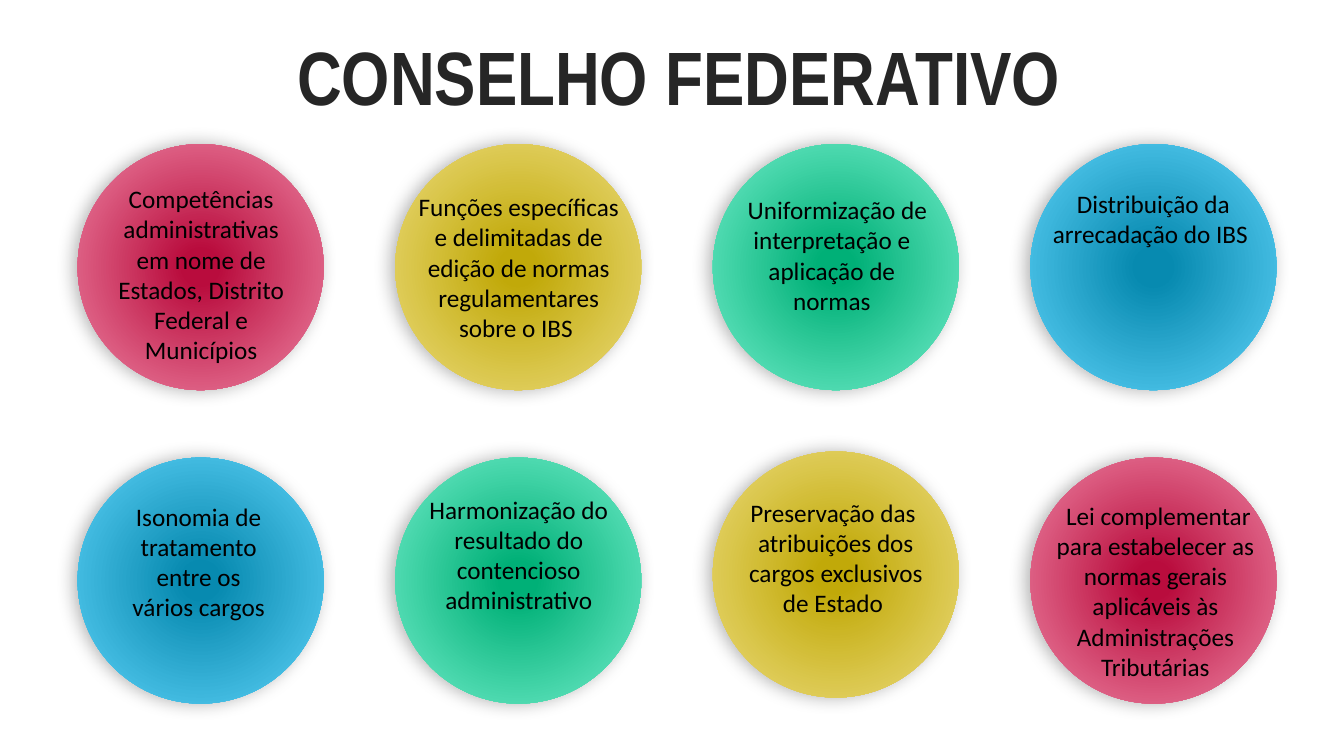
from lxml.etree import fromstring
from pptx import Presentation
from pptx.dml.color import RGBColor
from pptx.enum.shapes import MSO_SHAPE
from pptx.enum.text import MSO_ANCHOR, MSO_AUTO_SIZE, PP_ALIGN
from pptx.oxml.ns import nsdecls
from pptx.util import Inches, Pt

HUES = {"title": "262626", "text": "000000", "shade": "000000"}
GRADS = {
    "red": ("B90C3D", "EE86A4"),
    "gold": ("C1A909", "ECDC7C"),
    "green": ("00B077", "74EECB"),
    "blue": ("078AB0", "5FD2F8"),
}
LEFT, STEP, SIZE = 0.77, 3.15, 2.44

ROWS = [
    [
        ("red", 1.43, (0.95, 1.77, 2.09, 1.62), 0,
         ["Competências administrativas em nome de Estados, Distrito Federal e Municípios"]),
        ("gold", 1.43, (4, 1.85, 2.29, 1.62), 0,
         ["Funções específicas e delimitadas de edição de normas regulamentares sobre o IBS "]),
        ("green", 1.43, (7.16, 1.88, 2.18, 1.55), 0.11,
         ["Uniformização de interpretação e aplicação de normas"]),
        ("blue", 1.43, (10.21, 1.82, 2.4, 0.71), 0.06,
         ["Distribuição da arrecadação do IBS"]),
    ],
    [
        ("blue", 4.54, (1.13, 4.92, 1.68, 1.31), 0,
         ["Isonomia de tratamento entre os vários cargos"]),
        ("green", 4.54, (4, 4.85, 2.29, 1.31), 0,
         ["Harmonização do resultado do contencioso administrativo"]),
        ("gold", 4.48, (7.2, 4.88, 2.18, 1.31), 0,
         ["Preservação das ", "atribuições dos cargos exclusivos de Estado "]),
        ("red", 4.54, (10.33, 4.91, 2.26, 1.92), 0.06,
         ["Lei complementar para estabelecer as normas gerais aplicáveis às "
          "Administrações Tributárias"]),
    ],
]


class Deck:
    def __init__(self):
        self.show = Presentation()
        self.show.slide_width = Inches(13.33)
        self.show.slide_height = Inches(7.5)
        self.slide = self.show.slides.add_slide(self.show.slide_layouts[5])

    def words(self, para, text, font, size, hue, bold=False):
        para.alignment = PP_ALIGN.CENTER
        run = para.add_run()
        run.text = text
        run.font.name = font
        run.font.size = Pt(size)
        run.font.bold = bold
        run.font.color.rgb = RGBColor.from_string(HUES[hue])

    def title(self, text, left, top, width, height):
        box = self.slide.shapes.title
        box.left, box.top = Inches(left), Inches(top)
        box.width, box.height = Inches(width), Inches(height)
        frame = box.text_frame
        frame.word_wrap = True
        frame.auto_size = MSO_AUTO_SIZE.SHAPE_TO_FIT_TEXT
        frame.vertical_anchor = MSO_ANCHOR.TOP
        self.words(frame.paragraphs[0], text, "Arial Narrow", 54, "title", True)

    def ball(self, group, hue, left, top):
        disc = group.shapes.add_shape(
            MSO_SHAPE.OVAL, Inches(left), Inches(top), Inches(SIZE), Inches(SIZE))
        disc.line.fill.background()
        disc.fill.background()
        disc.shadow.inherit = False
        core, rim = GRADS[hue]
        props = disc._element.spPr
        props.replace(props.find("{*}noFill"), fromstring(
            f'<a:gradFill {nsdecls("a")} rotWithShape="1"><a:gsLst>'
            f'<a:gs pos="10000"><a:srgbClr val="{core}"/></a:gs>'
            f'<a:gs pos="100000"><a:srgbClr val="{rim}"/></a:gs></a:gsLst>'
            '<a:path path="circle"><a:fillToRect l="50000" t="50000" r="50000" b="50000"/>'
            '</a:path></a:gradFill>'))
        props.find("{*}effectLst").append(fromstring(
            f'<a:outerShdw {nsdecls("a")} blurRad="{Pt(13)}" dist="{Pt(3)}" dir="10800000" '
            f'algn="r" rotWithShape="0"><a:srgbClr val="{HUES["shade"]}">'
            '<a:alpha val="30000"/></a:srgbClr></a:outerShdw>'))

    def label(self, group, place, dent, lines):
        box = group.shapes.add_textbox(*[Inches(side) for side in place])
        frame = box.text_frame
        frame.word_wrap = True
        frame.auto_size = MSO_AUTO_SIZE.SHAPE_TO_FIT_TEXT
        for index, line in enumerate(lines):
            para = frame.add_paragraph() if index else frame.paragraphs[0]
            self.words(para, line, "Calibri", 18, "text")
            if dent:
                props = para._p.get_or_add_pPr()
                props.set("marL", "0")
                props.set("indent", str(Inches(dent)))

    def topic(self, col, hue, top, place, dent, lines):
        group = self.slide.shapes.add_group_shape()
        self.ball(group, hue, LEFT + STEP * col, top)
        self.label(group, place, dent, lines)


def main():
    deck = Deck()
    deck.title("CONSELHO FEDERATIVO", 0.66, 0.25, 12.15, 1.01)
    for row in ROWS:
        for col, item in enumerate(row):
            deck.topic(col, *item)
    deck.show.save("out.pptx")


if __name__ == "__main__":
    main()
